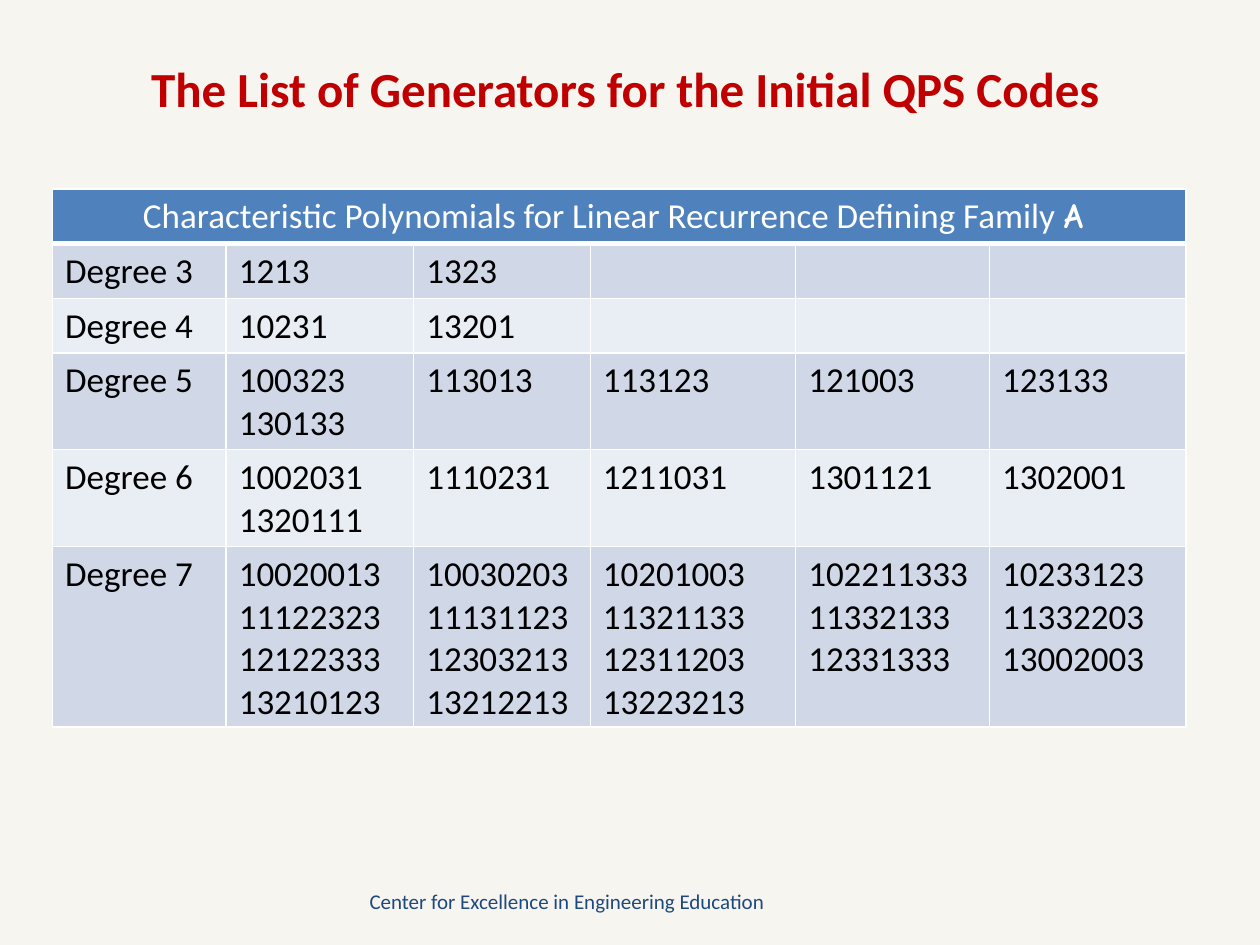
from lxml import etree
from pptx import Presentation
from pptx.dml.color import RGBColor
from pptx.enum.text import MSO_ANCHOR, PP_ALIGN
from pptx.oxml.ns import qn
from pptx.util import Cm, Pt

LEFT, CENTER = PP_ALIGN.LEFT, PP_ALIGN.CENTER
TOP = MSO_ANCHOR.TOP

PAPER = RGBColor(0xF6, 0xF5, 0xF0)
RED = RGBColor(0xC0, 0x00, 0x00)
NAVY = RGBColor(0x1F, 0x49, 0x7D)
BLUE = RGBColor(0x4F, 0x81, 0xBD)
BANDS = RGBColor(0xD0, 0xD8, 0xE8), RGBColor(0xE9, 0xED, 0xF4)
WHITE = RGBColor(0xFF, 0xFF, 0xFF)
BLACK = RGBColor(0x00, 0x00, 0x00)

WIDTHS = [3.5, 3.78, 3.56, 4.14, 3.91, 3.96]
HEIGHTS = [1.1, 1.1, 1.1, 1.95, 1.95, 3.64]
CODES = {
    3: ["1213", "1323"],
    4: ["10231", "13201"],
    5: ["100323\n130133", "113013", "113123", "121003", "123133"],
    6: ["1002031\n1320111", "1110231", "1211031", "1301121", "1302001"],
    7: ["10020013\n11122323\n12122333\n13210123",
        "10030203\n11131123\n12303213\n13212213",
        "10201003\n11321133\n12311203\n13223213",
        "102211333\n11332133\n12331333",
        "10233123\n11332203\n13002003"],
}


def style(run, size, color, bold=False, face="Calibri"):
    font = run.font
    font.name, font.size, font.bold = face, Pt(size), bold
    font.color.rgb = color


def write(frame, text, align=LEFT, **look):
    """Fill the frame with one paragraph for each line of text."""
    for i, line in enumerate(text.split("\n")):
        para = frame.paragraphs[0] if i == 0 else frame.add_paragraph()
        para.alignment = align
        run = para.add_run()
        run.text = line
        style(run, **look)


def paint(cell, fill, base=1):
    """Give the cell white edges, the lower one base points wide, and a fill."""
    props = cell._tc.get_or_add_tcPr()
    for side, width in zip("LRTB", (1, 1, 1, base)):
        line = etree.SubElement(props, qn(f"a:ln{side}"), w=str(Pt(width)))
        solid = etree.SubElement(line, qn("a:solidFill"))
        etree.SubElement(solid, qn("a:srgbClr"), val=str(WHITE))
    cell.fill.solid()
    cell.fill.fore_color.rgb = fill


def add_title(slide, left, top, width, height):
    title = slide.shapes.title
    title.left, title.top = Cm(left), Cm(top)
    title.width, title.height = Cm(width), Cm(height)
    title.text_frame.vertical_anchor = TOP
    write(title.text_frame, "The List of Generators for the Initial QPS Codes",
          align=CENTER, size=28, color=RED, bold=True)


def add_codes(slide, left, top):
    table = slide.shapes.add_table(
        len(HEIGHTS), len(WIDTHS), Cm(left), Cm(top),
        Cm(sum(WIDTHS)), Cm(sum(HEIGHTS))).table
    for col, width in zip(table.columns, WIDTHS):
        col.width = Cm(width)
    for row, height in zip(table.rows, HEIGHTS):
        row.height = Cm(height)

    head = table.cell(0, 0)
    head.merge(table.cell(0, len(WIDTHS) - 1))
    for cell in table.rows[0].cells:
        paint(cell, BLUE, base=3)
    write(head.text_frame,
          "Characteristic Polynomials for Linear Recurrence Defining Family ",
          align=CENTER, size=20, color=WHITE)
    family = head.text_frame.paragraphs[0].add_run()
    family.text = "A "
    style(family, 20, WHITE, bold=True, face="Comic Neue")

    for r, (degree, codes) in enumerate(CODES.items(), 1):
        texts = [f"Degree {degree}", *codes]
        for c, cell in enumerate(table.rows[r].cells):
            paint(cell, BANDS[(r - 1) % 2])
            if c < len(texts):
                write(cell.text_frame, texts[c], size=20, color=BLACK)


def add_footer(slide, left, top, width, height):
    box = slide.shapes.add_textbox(Cm(left), Cm(top), Cm(width), Cm(height))
    box.text_frame.word_wrap = True
    write(box.text_frame, "Center for Excellence in Engineering Education",
          size=12, color=NAVY)


def main():
    deck = Presentation()
    deck.slide_width, deck.slide_height = Cm(25.4), Cm(19.05)
    slide = deck.slides.add_slide(deck.slide_layouts[5])
    slide.background.fill.solid()
    slide.background.fill.fore_color.rgb = PAPER
    add_footer(slide, 7.2, 17.78, 9.72, 0.77)
    add_codes(slide, 1.06, 3.81)
    add_title(slide, 1.9, 1.06, 21.4, 1.45)
    deck.save("out.pptx")


if __name__ == "__main__":
    main()
